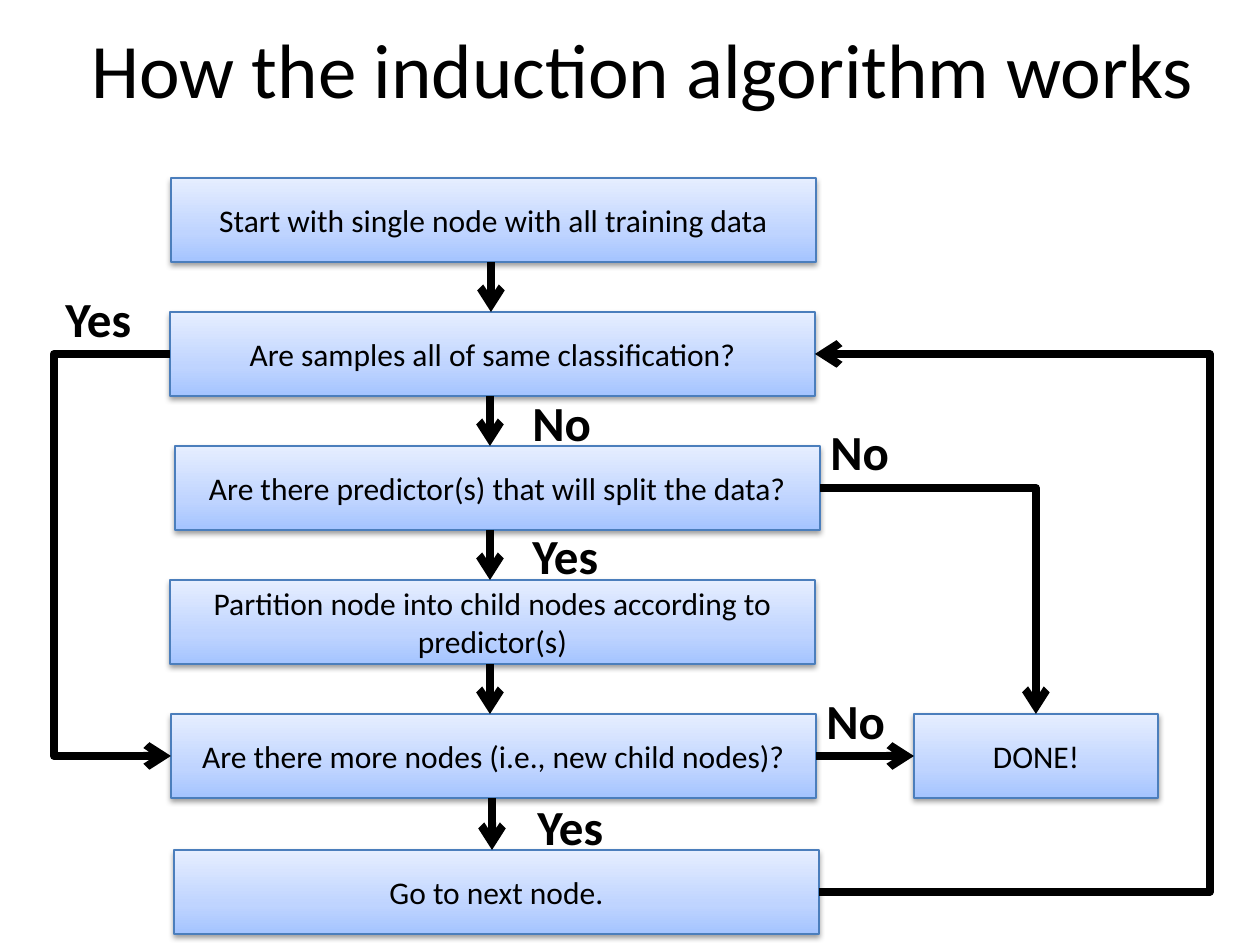
from lxml import etree
from pptx import Presentation, util as u
from pptx.dml.color import RGBColor
from pptx.enum import shapes, text
from pptx.oxml import ns

PX = 914400 / 126  # EMU in one px
COLORS = {"ink": "000000", "edge": "4B7EBC"}
GRADIENT = {0: "A4C4FF", 35: "BFD4FF", 100: "E6EEFF"}  # percent from the bottom


def emu(*lengths):
    return [u.Emu(round(n * PX)) for n in lengths]


def rgb(name):
    return RGBColor.from_string(COLORS[name])


def add(parent, tag, **attrs):
    return etree.SubElement(parent, ns.qn(tag), {k: str(v) for k, v in attrs.items()})


class Deck:
    font = "Calibri"

    def __init__(self, width, height):
        self.prs = Presentation()
        self.prs.slide_width, self.prs.slide_height = emu(width, height)
        self.s = self.prs.slides.add_slide(self.prs.slide_layouts[6])

    def set_text(self, sp, words, align, frame, font):
        tf = sp.text_frame
        for key, value in {"word_wrap": True, **frame}.items():
            setattr(tf, key, value)
        p = tf.paragraphs[0]
        p.alignment = align
        r = p.add_run()
        r.text = words
        for key, value in {"name": self.font, **font}.items():
            setattr(r.font, key, value)
        r.font.color.rgb = rgb("ink")

    def title(self, words, *box):
        sp = self.s.shapes.add_textbox(*emu(*box))
        self.set_text(sp, words, text.PP_ALIGN.CENTER,
                      {"vertical_anchor": text.MSO_ANCHOR.MIDDLE}, {"size": u.Pt(44)})

    def label(self, words, x, y):
        sp = self.s.shapes.add_textbox(*emu(x, y, 117, 72))
        self.set_text(sp, words, text.PP_ALIGN.LEFT,
                      {"auto_size": text.MSO_AUTO_SIZE.SHAPE_TO_FIT_TEXT},
                      {"size": u.Pt(28), "bold": True})

    def box(self, words, *box):
        sp = self.s.shapes.add_shape(shapes.MSO_SHAPE.RECTANGLE, *emu(*box))
        # Three-stop gradient running upwards
        sp.fill.gradient()
        sp.fill.gradient_angle = 90
        stops = sp._element.spPr.find(".//" + ns.qn("a:gsLst"))
        for old in list(stops):
            stops.remove(old)
        for pos, color in GRADIENT.items():
            add(add(stops, "a:gs", pos=pos * 1000), "a:srgbClr", val=color)
        sp.line.color.rgb = rgb("edge")
        sp.line.width = u.Pt(0.75)
        # Soft shadow below
        sp.shadow.inherit = False
        effects = sp._element.spPr.find(ns.qn("a:effectLst"))
        shadow = add(effects, "a:outerShdw", blurRad=u.Pt(3.1), dist=u.Pt(1.6),
                     dir=5400000, rotWithShape=0)
        add(add(shadow, "a:srgbClr", val=COLORS["ink"]), "a:alpha", val=38000)
        self.set_text(sp, words, text.PP_ALIGN.CENTER,
                      {"vertical_anchor": text.MSO_ANCHOR.MIDDLE}, {"size": u.Pt(18)})
        return sp

    def arrow(self, x1, y1, x2, y2, kind=shapes.MSO_CONNECTOR.STRAIGHT):
        c = self.s.shapes.add_connector(kind, *emu(x1, y1, x2, y2))
        c.line.color.rgb = rgb("ink")
        c.line.width = u.Pt(4.5)
        add(c._element.spPr.find(ns.qn("a:ln")), "a:tailEnd", type="arrow")
        add(c._element.spPr, "a:effectLst")
        return c

    def elbow(self, x1, y1, x2, y2, via=None):
        """Two bends through the column x = via, or a single corner without it."""
        c = self.arrow(x1, y1, x2, y2, shapes.MSO_CONNECTOR.ELBOW)
        geom = c._element.spPr.find(ns.qn("a:prstGeom"))
        if via is None:
            geom.set("prst", "bentConnector2")
            return
        guides = geom.find(ns.qn("a:avLst"))
        if guides is None:
            guides = add(geom, "a:avLst")
        ratio = round((via - x1) / (x2 - x1) * 100000)
        add(guides, "a:gd", name="adj1", fmla=f"val {ratio}")


def main():
    deck = Deck(1260, 945)
    deck.title("How the induction algorithm works", 76, 0, 1134, 136)

    # Steps: left, wording
    width, height = 645, 84
    tops = [178 + 134 * i for i in range(5)] + [850]
    steps = [
        (171, "Start with single node with all training data"),
        (170, "Are samples all of same classification?"),
        (175, "Are there predictor(s) that will split the data?"),
        (170, "Partition node into child nodes according to predictor(s)"),
        (171, "Are there more nodes (i.e., new child nodes)?"),
        (174, "Go to next node."),
    ]
    boxes = [deck.box(words, x, y, width, height) for (x, words), y in zip(steps, tops)]
    done = deck.box("DONE!", 914, tops[4], 244, height)

    # Downward arrows between steps
    for x, y, below in zip((491, 490, 490, 490, 492), tops, tops[1:]):
        deck.arrow(x, y + height, x, below)

    # Branches
    middles = [y + height // 2 for y in tops]
    finish = deck.arrow(816, middles[4], 914, middles[4])
    finish.begin_connect(boxes[4], 3)
    finish.end_connect(done, 1)
    deck.elbow(170, middles[1], 171, middles[4], via=53)
    deck.elbow(820, middles[2], 1036, tops[4])
    deck.elbow(819, middles[5], 815, middles[1], via=1208)

    # Answers
    for words, x, y in [("Yes", 53, 282), ("No", 520, 386), ("No", 818, 415),
                        ("Yes", 520, 519), ("No", 814, 684), ("Yes", 525, 790)]:
        deck.label(words, x, y)

    deck.prs.save("out.pptx")


if __name__ == "__main__":
    main()
